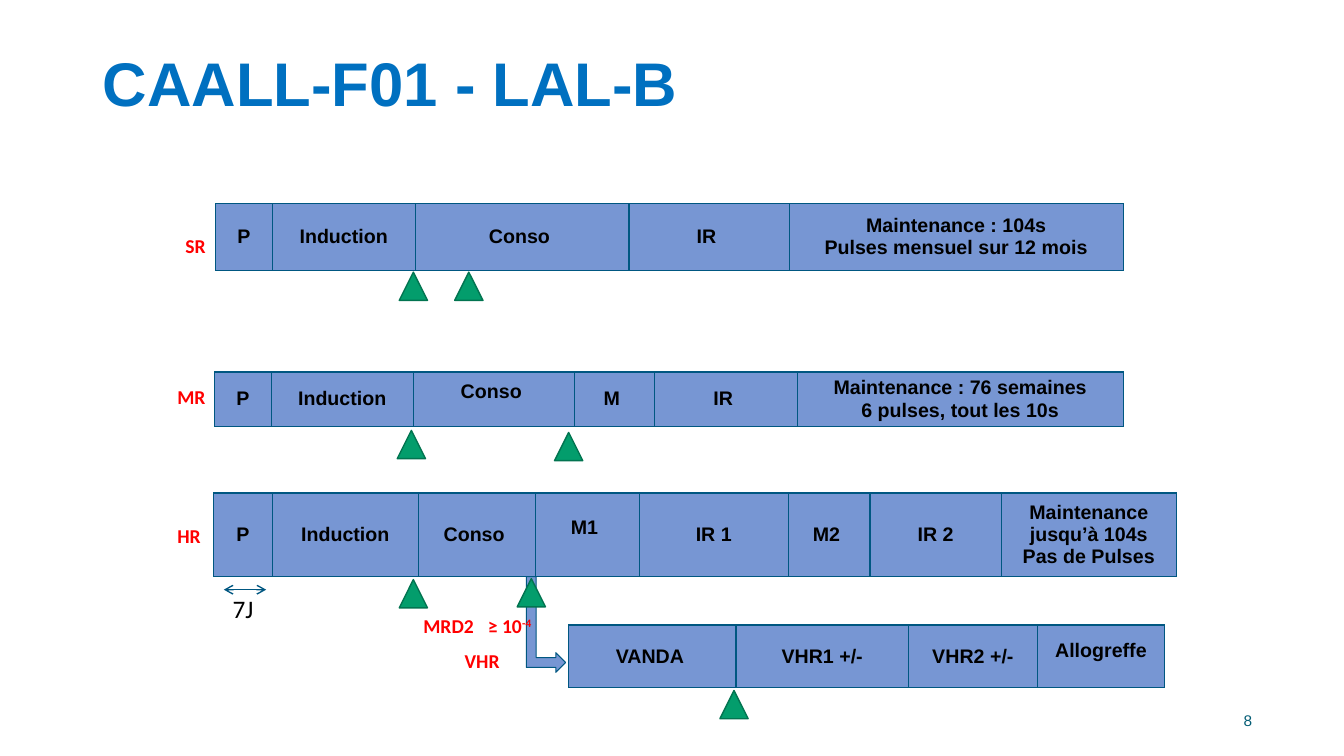
from lxml.etree import SubElement
from pptx import Presentation
from pptx.dml.color import RGBColor
from pptx.enum.shapes import MSO_CONNECTOR as Conn, MSO_SHAPE as Shape
from pptx.enum.text import MSO_ANCHOR as Anchor, PP_ALIGN as Align
from pptx.oxml.ns import qn
from pptx.util import Pt

SCALE = 9144
BLUE, EDGE, RED = "7796D3", "005781", "FF0000"
BANDS = [
    (214, 202, 66, [
        (56, "P"), (142, "Induction"), (212, "Conso "), (159, "IR "),
        (331, "Maintenance : 104s\nPulses mensuel sur 12 mois")]),
    (213, 369, 54, [
        (56, "P"), (141, "Induction"), (160, "Conso "), (79, "M "), (142, "IR "),
        (323, "Maintenance : 76 semaines\n6 pulses, tout les 10s")]),
    (212, 489, 83, [
        (58, "P"), (145, "Induction"), (116, "Conso "), (103, "M1 "), (148, "IR 1"),
        (81, "M2 "), (130, "IR 2"),
        (174, "Maintenance jusqu’à 104s\nPas de Pulses")]),
    (564, 620, 62, [
        (166, "VANDA "), (171, "VHR1 +/-"), (128, "VHR2 +/-"), (126, "Allogreffe")]),
]
RAISED = {(1, 2): 14, (2, 3): 15, (3, 3): 10}
MARKS = [(396, 270), (451, 270), (394, 427), (550, 429), (396, 575), (513, 574), (714, 685)]
LABELS = [("SR", 174, 227, 47), ("MR", 166, 377, 55), ("HR", 166, 515, 55), ("VHR", 451, 639, 71)]


def px(*nums):
    """Turn px lengths into EMU."""
    return [n * SCALE for n in nums]


def hue(code):
    """Turn a hex string into a colour."""
    return RGBColor.from_string(code)


def write(para, text, size, face, color, bold=False):
    """Add one formatted run to a paragraph."""
    run = para.add_run()
    run.text = text
    font = run.font
    font.size, font.name, font.bold = Pt(size), face, bold
    font.color.rgb = hue(color)
    return run


def paint(shape, fill, edge, width):
    """Give a shape a flat fill and an outline."""
    shape.shadow.inherit = False
    shape.fill.solid()
    shape.fill.fore_color.rgb = hue(fill)
    shape.line.color.rgb = hue(edge)
    shape.line.width = Pt(width)


def frame(cell):
    """Draw the four borders of a table cell."""
    props = cell._tc.get_or_add_tcPr()
    for spot, side in enumerate(("a:lnL", "a:lnR", "a:lnT", "a:lnB")):
        line = props.makeelement(qn(side), {"w": str(Pt(1))})
        fill = SubElement(line, qn("a:solidFill"))
        SubElement(fill, qn("a:srgbClr"), val=EDGE)
        props.insert(spot, line)


def band(slide, box, phases, raised):
    """Build one treatment arm as a single-row table."""
    left, top, high = box
    wide = sum(width for width, _ in phases)
    table = slide.shapes.add_table(1, len(phases), *px(left, top, wide, high)).table
    table.first_row = table.horz_banding = False
    for spot, (width, text) in enumerate(phases):
        table.columns[spot].width = px(width)[0]
        cell = table.cell(0, spot)
        cell.vertical_anchor = Anchor.MIDDLE
        cell.margin_bottom = px(5 + raised.get(spot, 0))[0]
        cell.fill.solid()
        cell.fill.fore_color.rgb = hue(BLUE)
        frame(cell)
        body = cell.text_frame
        for row, part in enumerate(text.split("\n")):
            para = body.add_paragraph() if row else body.paragraphs[0]
            para.alignment = Align.CENTER
            write(para, part, 14, "Arial", "000000", True)


def note(slide, box, wrap=True):
    """Add an empty text box and return its frame."""
    body = slide.shapes.add_textbox(*px(*box)).text_frame
    body.word_wrap = wrap
    return body


def label(slide, box, text):
    """Add a red risk-group label and return its paragraph."""
    para = note(slide, box).paragraphs[0]
    write(para, text, 14, "Calibri", RED, True)
    return para


def limit(slide, box):
    """Add the MRD2 threshold with its raised exponent."""
    para = note(slide, box).paragraphs[0]
    stops = SubElement(para._p.get_or_add_pPr(), qn("a:tabLst"))
    SubElement(stops, qn("a:tab"), pos=str(px(64)[0]), algn="l")
    write(para, "MRD2\t≥ 10", 14, "Calibri", RED, True)
    power = write(para, "-4", 14, "Calibri", RED, True)
    power.font._element.set("baseline", "30000")


def bend(slide, box):
    """Add the bent arrow leading to the VHR arm."""
    arrow = slide.shapes.add_shape(Shape.BENT_UP_ARROW, *px(*box))
    arrow.rotation = 90
    paint(arrow, BLUE, EDGE, 0.75)


def span(slide, left, top, wide):
    """Add the seven-day scale with its double arrow."""
    body = note(slide, (left - 1, top - 1, wide - 1, 40), False)
    write(body.paragraphs[0], "7J", 18, "Calibri", "000000")
    line = slide.shapes.add_connector(Conn.STRAIGHT, *px(left, top, left + wide, top))
    line.line.color.rgb = hue(EDGE)
    line.line.width = Pt(1)
    stroke = line.line._get_or_add_ln()
    for end in ("a:headEnd", "a:tailEnd"):
        SubElement(stroke, qn(end), type="arrow")
    SubElement(line._element.spPr, qn("a:effectLst"))


def mark(slide, left, top):
    """Add one green evaluation triangle."""
    tri = slide.shapes.add_shape(Shape.ISOSCELES_TRIANGLE, *px(left, top, 28, 28))
    paint(tri, "039D6C", "027450", 1)


def head(slide, box):
    """Place and format the slide title."""
    title = slide.shapes.title
    title.left, title.top, title.width, title.height = px(*box)
    body = title.text_frame
    body.vertical_anchor = Anchor.MIDDLE
    para = body.paragraphs[0]
    para.alignment, para.line_spacing = Align.LEFT, 0.9
    write(para, "CAALL-F01 - LAL-B", 44, "Arial", "0070C0", True)


def folio(slide, box):
    """Add the page number at the lower right."""
    body = note(slide, box)
    body.vertical_anchor, body.margin_right = Anchor.MIDDLE, 0
    para = body.paragraphs[0]
    para.alignment = Align.RIGHT
    write(para, "8", 11, "Arial", "045D75")


def main():
    """Build the protocol slide and save it."""
    deck = Presentation()
    deck.slide_width, deck.slide_height = px(1333, 750)
    slide = deck.slides.add_slide(deck.slide_layouts[5])
    head(slide, (92, 40, 1150, 92))
    for row, (left, top, high, phases) in enumerate(BANDS):
        raised = {col: lift for (arm, col), lift in RAISED.items() if arm == row}
        band(slide, (left, top, high), phases, raised)
    for text, left, top, wide in LABELS:
        label(slide, (left, top, wide, 34), text)
    bend(slide, (494, 600, 95, 39))
    limit(slide, (410, 604, 161, 34))
    span(slide, 222, 585, 42)
    for left, top in MARKS:
        mark(slide, left, top)
    folio(slide, (942, 695, 300, 40))
    deck.save("out.pptx")


if __name__ == "__main__":
    main()
